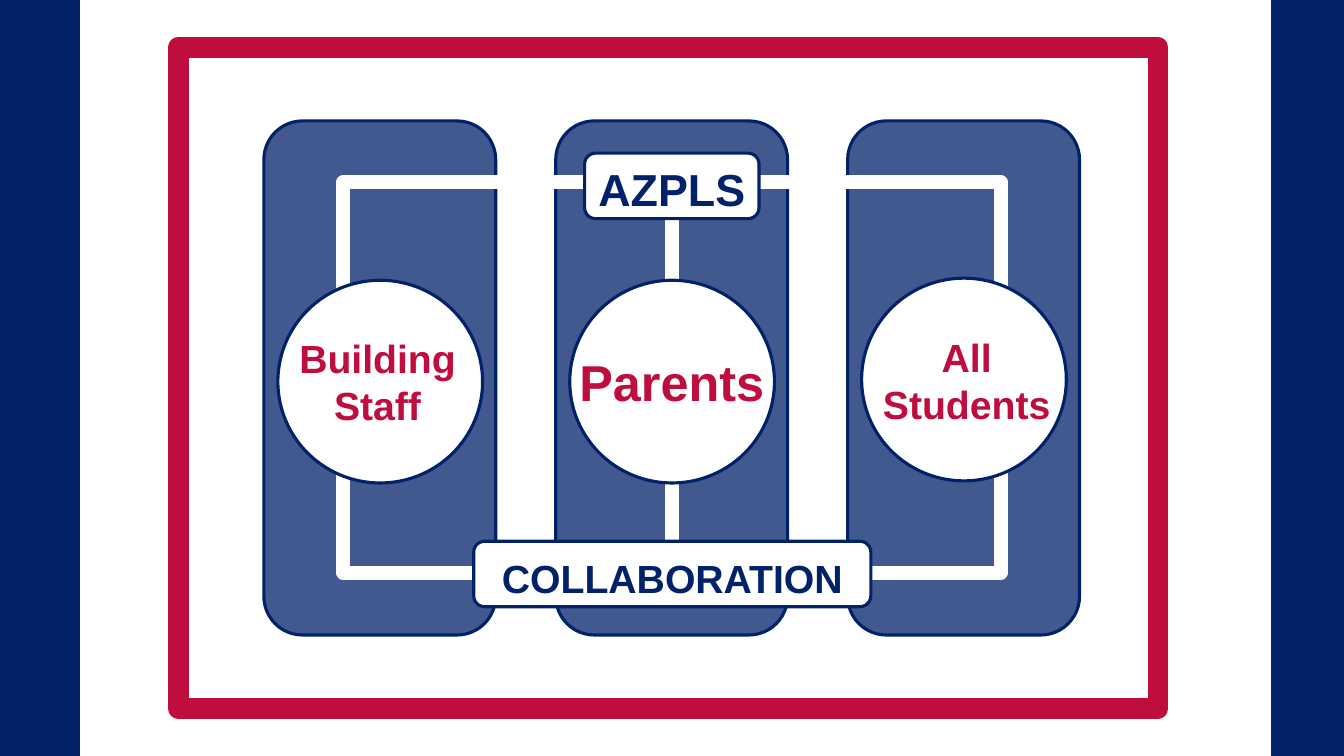
from lxml import etree
from pptx import Presentation
from pptx.dml.color import RGBColor
from pptx.enum.shapes import MSO_CONNECTOR, MSO_SHAPE
from pptx.enum.text import MSO_AUTO_SIZE, PP_ALIGN
from pptx.oxml.ns import qn
from pptx.util import Pt

RECTANGLE = MSO_SHAPE.RECTANGLE
ROUNDED = MSO_SHAPE.ROUNDED_RECTANGLE
CIRCLE = MSO_SHAPE.FLOWCHART_CONNECTOR
STRAIGHT = MSO_CONNECTOR.STRAIGHT
CENTER = PP_ALIGN.CENTER
FIT_SHAPE = MSO_AUTO_SIZE.SHAPE_TO_FIT_TEXT

WHITE = RGBColor(0xFF, 0xFF, 0xFF)
NAVY = RGBColor(0x01, 0x21, 0x69)
SLATE = RGBColor(0x41, 0x59, 0x8F)
RED = RGBColor(0xBF, 0x0D, 0x3E)

SLIDE_WIDTH, SLIDE_HEIGHT = 960, 540
OUTLINE = 2.25
TRACK = 10
COLUMN_LEFT, COLUMN_STEP = 188.5, 208.5


def add_box(slide, kind, left, top, width, height, fill=None, line=None, weight=OUTLINE):
    shape = slide.shapes.add_shape(kind, Pt(left), Pt(top), Pt(width), Pt(height))
    shape.shadow.inherit = False
    if fill is None:
        shape.fill.background()
    else:
        shape.fill.solid()
        shape.fill.fore_color.rgb = fill
    if line is None:
        shape.line.fill.background()
    else:
        shape.line.color.rgb = line
        shape.line.width = Pt(weight)


def add_track_line(slide, x, top, bottom):
    connector = slide.shapes.add_connector(STRAIGHT, Pt(x), Pt(top), Pt(x), Pt(bottom))
    connector.line.color.rgb = WHITE
    connector.line.width = Pt(TRACK)
    etree.SubElement(connector._element.spPr, qn("a:effectLst"))


def add_label(slide, text, left, top, width, height, size, color):
    box = slide.shapes.add_textbox(Pt(left), Pt(top), Pt(width), Pt(height))
    frame = box.text_frame
    frame.word_wrap = True
    frame.auto_size = FIT_SHAPE
    paragraph = frame.paragraphs[0]
    paragraph.alignment = CENTER
    run = paragraph.add_run()
    run.text = text
    run.font.name = "Arial"
    run.font.size = Pt(size)
    run.font.bold = True
    run.font.color.rgb = color


def main():
    presentation = Presentation()
    presentation.slide_width = Pt(SLIDE_WIDTH)
    presentation.slide_height = Pt(SLIDE_HEIGHT)
    slide = presentation.slides.add_slide(presentation.slide_layouts[6])

    # Red frame and the three columns
    add_box(slide, RECTANGLE, 127.4, 33.8, 699.8, 472.3, WHITE, RED, 14.75)
    columns = [COLUMN_LEFT + COLUMN_STEP * index for index in range(3)]
    for left in columns:
        add_box(slide, ROUNDED, left, 86.4, 165.6, 367.2, SLATE, NAVY)

    # White track joining the columns
    add_box(slide, RECTANGLE, 245.2, 130.2, 469.6, 278.8, line=WHITE, weight=TRACK)
    add_track_line(slide, SLIDE_WIDTH / 2, 130.2, 409)

    # Group circles
    for left, top in zip(columns, (200.2, 200.2, 198.7)):
        add_box(slide, CIRCLE, left + 10, top, 146.2, 144.8, WHITE, NAVY)
    add_label(slide, "Building Staff", 198, 235.4, 143.3, 74.9, 28, RED)
    add_label(slide, "Parents", 406.1, 247, 147.6, 51.1, 36, RED)
    add_label(slide, "All Students", 614.2, 234.7, 152.6, 74.9, 28, RED)

    # Plates at the top and bottom of the track
    add_box(slide, ROUNDED, 417.6, 109.4, 124.6, 46.8, WHITE, NAVY)
    add_label(slide, "AZPLS", 417.6, 112.3, 124.6, 46.1, 32, NAVY)
    add_box(slide, ROUNDED, 338.4, 386.6, 283.7, 46.8, WHITE, NAVY)
    add_label(slide, "COLLABORATION", 338.4, 392.4, 283.7, 41.8, 28, NAVY)

    # Side bars
    for left, width in ((0, 57), (908, 52)):
        add_box(slide, RECTANGLE, left, 0, width, SLIDE_HEIGHT, NAVY)

    presentation.save("out.pptx")


if __name__ == "__main__":
    main()
